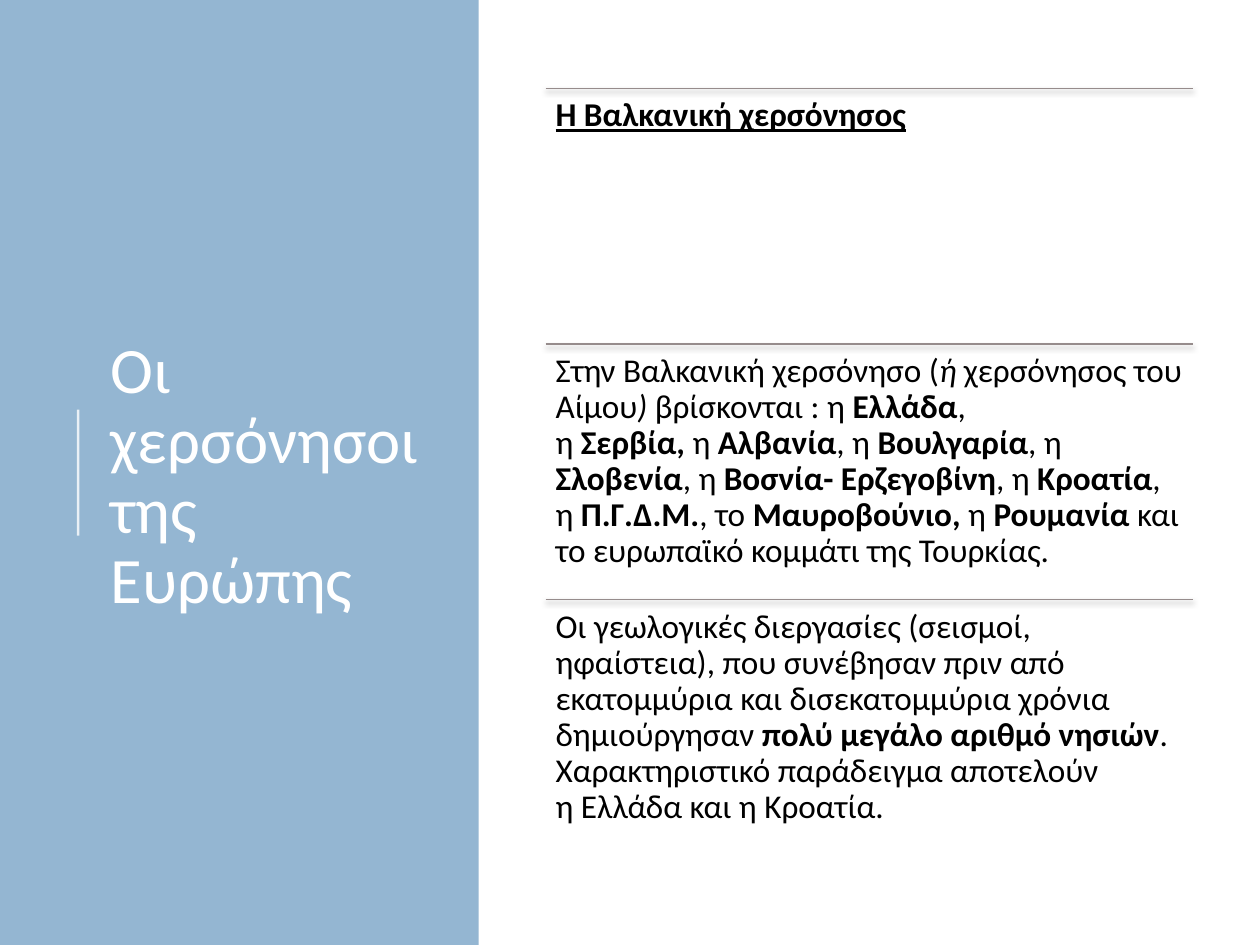
"""Build a slide about the Balkan peninsula with a title panel and three ruled sections."""
from lxml import etree
from pptx import Presentation
from pptx.dml.color import RGBColor
from pptx.enum.shapes import MSO_CONNECTOR, MSO_SHAPE
from pptx.enum.text import MSO_ANCHOR, MSO_AUTO_SIZE, PP_ALIGN
from pptx.oxml.ns import qn
from pptx.util import Inches, Pt

STRAIGHT = MSO_CONNECTOR.STRAIGHT
RECTANGLE = MSO_SHAPE.RECTANGLE
MIDDLE, TOP = MSO_ANCHOR.MIDDLE, MSO_ANCHOR.TOP
LEFT = PP_ALIGN.LEFT
NO_AUTOFIT = MSO_AUTO_SIZE.NONE

FONT = "Calibri"
COLORS = {"panel": "94B6D2", "white": "FFFFFF", "rule": "968C8C", "text": "000000"}
TITLE_ONLY = 5
SECTION_LEFT, SECTION_TOP = 4.33, 0.7
SECTION_WIDTH, SECTION_HEIGHT = 5.14, 2.03
TIE, NO_BREAK_SPACE = "~", chr(160)

SECTIONS = [
    [("Η Βαλκανική χερσόνησος", "bu")],
    [
        ("Στην Βαλκανική χερσόνησο (", ""), ("ή", "i"),
        ("~χερσόνησος του Αίμου", ""), (")~", "i"),
        ("βρίσκονται~:~η~", ""), ("Ελλάδα", "b"),
        (", η~", ""), ("Σερβία,~", "b"),
        ("η~", ""), ("Αλβανία", "b"),
        (", η~", ""), ("Βουλγαρία", "b"),
        (", η ", ""), ("Σλοβενία", "b"),
        (", η~", ""), ("Βοσνία- Ερζεγοβίνη", "b"),
        (", η~", ""), ("Κροατία", "b"),
        (", η~", ""), ("Π.Γ.Δ.Μ.", "b"),
        (", το ", ""), ("Μαυροβούνιο,", "b"),
        ("~η~", ""), ("Ρουμανία~", "b"),
        ("και το ευρωπαϊκό κομμάτι της Τουρκίας.", ""),
    ],
    [
        ("Οι γεωλογικές διεργασίες (σεισμοί, ηφαίστεια), που συνέβησαν πριν από "
         "εκατομμύρια και δισεκατομμύρια χρόνια δημιούργησαν ", ""),
        ("πολύ μεγάλο αριθμό νησιών", "b"),
        (". Χαρακτηριστικό παράδειγμα αποτελούν η~Ελλάδα και η Κροατία.", ""),
    ],
]


def rgb(name):
    """Return the named colour."""
    return RGBColor.from_string(COLORS[name])


def format_font(font, size, color):
    """Set the typeface, size and colour of a font."""
    font.name = FONT
    font.size = Pt(size)
    font.color.rgb = rgb(color)


def add_alpha(color_element, percent):
    """Make a colour element partly transparent."""
    etree.SubElement(color_element, qn("a:alpha"), val=str(percent * 1000))


def add_line(slide, start, end, color, width):
    """Draw a straight line and return it with its empty effect list."""
    line = slide.shapes.add_connector(STRAIGHT, *map(Inches, start + end))
    line.line.color.rgb = rgb(color)
    line.line.width = Pt(width)
    effects = etree.SubElement(line._element.spPr, qn("a:effectLst"))
    return line, effects


def add_soft_shadow(effects):
    """Add a soft shadow that falls straight down."""
    shadow = etree.SubElement(
        effects, qn("a:outerShdw"), blurRad=str(Pt(3.1)), dist=str(Pt(1.8)),
        dir=str(90 * 60000), rotWithShape="0")
    color = etree.SubElement(shadow, qn("a:srgbClr"), val=COLORS["text"])
    add_alpha(color, 35)


def add_title_panel(slide):
    """Place the title on a coloured panel with an accent line."""
    title = slide.shapes.title
    panel = slide.shapes.add_shape(RECTANGLE, 0, 0, Inches(3.8), Inches(7.5))
    panel.shadow.inherit = False
    panel.fill.solid()
    panel.fill.fore_color.rgb = rgb("panel")
    panel.line.fill.background()
    accent, _ = add_line(slide, (0.62, 4.25), (0.62, 3.25), "white", 1.5)
    add_alpha(accent._element.spPr.find(".//" + qn("a:srgbClr")), 80)
    for shape in (panel, accent):
        title._element.addprevious(shape._element)

    title.left, title.top = Inches(0.78), Inches(0.78)
    title.width, title.height = Inches(2.76), Inches(6.02)
    frame = title.text_frame
    frame.text = "Οι χερσόνησοι της Ευρώπης"
    frame.word_wrap = True
    frame.auto_size = NO_AUTOFIT
    frame.vertical_anchor = MIDDLE
    paragraph = frame.paragraphs[0]
    paragraph.alignment = LEFT
    paragraph.line_spacing = 0.9
    format_font(paragraph.runs[0].font, 37, "white")


def add_section(slide, top, runs):
    """Add a shadowed rule with a block of mixed-style text below it."""
    right = SECTION_LEFT + SECTION_WIDTH
    _, effects = add_line(slide, (SECTION_LEFT, top), (right, top), "rule", 0.75)
    add_soft_shadow(effects)
    box = slide.shapes.add_textbox(
        *map(Inches, (SECTION_LEFT, top, SECTION_WIDTH, SECTION_HEIGHT)))
    frame = box.text_frame
    frame.word_wrap = True
    frame.vertical_anchor = TOP
    frame.margin_left = frame.margin_right = Inches(0.08)
    frame.margin_top = frame.margin_bottom = Inches(0.08)
    paragraph = frame.paragraphs[0]
    paragraph.alignment = LEFT
    paragraph.line_spacing = 0.9
    for text, style in runs:
        run = paragraph.add_run()
        run.text = text.replace(TIE, NO_BREAK_SPACE)
        format_font(run.font, 19, "text")
        run.font.bold = "b" in style
        run.font.italic = "i" in style
        run.font.underline = "u" in style


def main():
    """Create the presentation and save it."""
    presentation = Presentation()
    presentation.slide_width = Inches(10)
    presentation.slide_height = Inches(7.5)
    slide = presentation.slides.add_slide(presentation.slide_layouts[TITLE_ONLY])
    add_title_panel(slide)
    for index, runs in enumerate(SECTIONS):
        add_section(slide, SECTION_TOP + index * SECTION_HEIGHT, runs)
    presentation.save("out.pptx")


if __name__ == "__main__":
    main()
